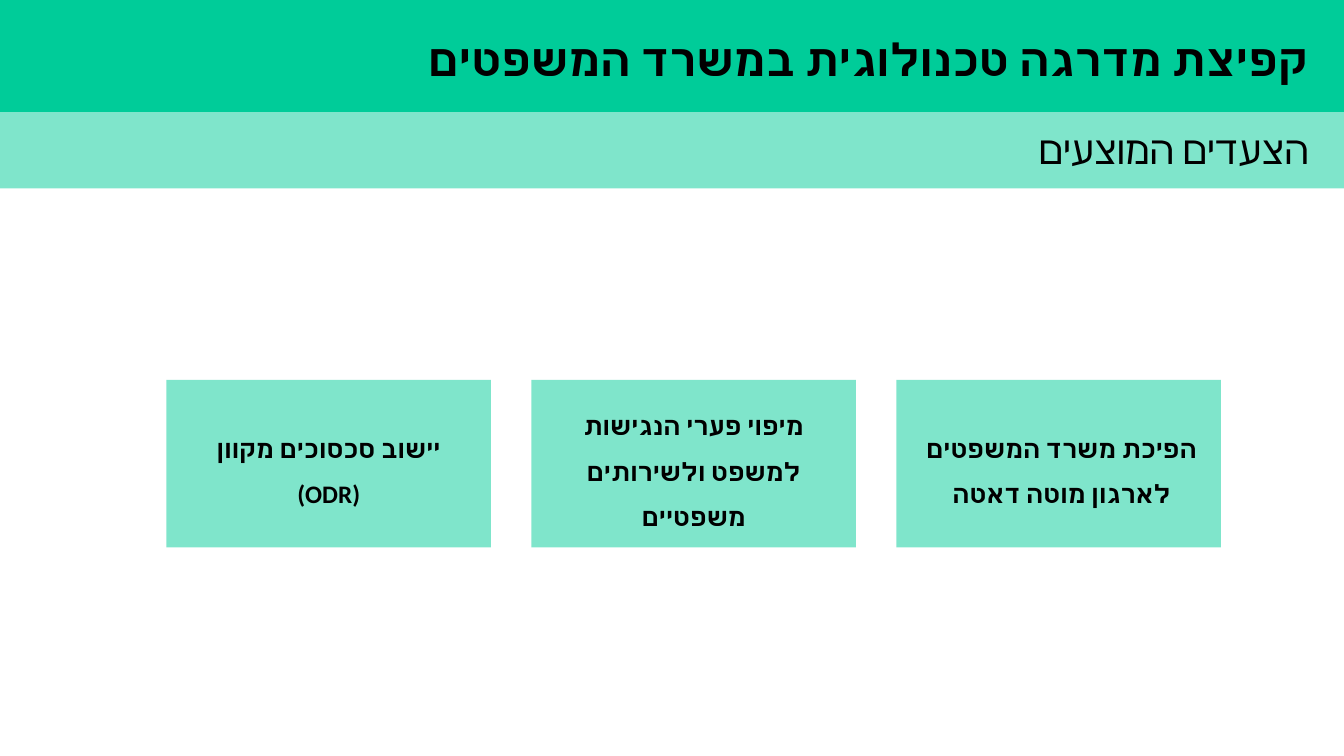
from lxml.etree import SubElement
from pptx import Presentation
from pptx.dml.color import RGBColor
from pptx.enum.shapes import MSO_SHAPE as Shape
from pptx.enum.text import MSO_ANCHOR as Anchor, MSO_AUTO_SIZE as AutoSize, PP_ALIGN as Align
from pptx.oxml.ns import qn
from pptx.util import Inches, Pt

COLORS = {"green": "00CC99", "text": "000000"}
FONT = "Calibri"
SLIDE_WIDTH, SLIDE_HEIGHT = 13.33, 7.5
STEP_LEFT, STEP_TOP, STEP_WIDTH, STEP_HEIGHT, STEP_GAP = 1.65, 3.77, 3.22, 1.66, 0.4
STEPS = [
    ["יישוב סכסוכים מקוון", "(ODR)"],
    ["מיפוי פערי הנגישות למשפט ולשירותים משפטיים"],
    ["הפיכת משרד המשפטים ", "לארגון מוטה דאטה "],
]


class HebrewSlide:
    def __init__(self, presentation):
        self.slide = presentation.slides.add_slide(presentation.slide_layouts[6])

    def add_lines(self, frame, lines, size, align, bold=False, spacing=None):
        frame.word_wrap = True
        for index, line in enumerate(lines):
            paragraph = frame.paragraphs[0] if index == 0 else frame.add_paragraph()
            paragraph.alignment = align
            paragraph.line_spacing = spacing
            paragraph._p.get_or_add_pPr().set("rtl", "1")
            run = paragraph.add_run()
            run.text = line
            font = run.font
            font.size = Pt(size)
            font.bold = bold
            font.color.rgb = RGBColor.from_string(COLORS["text"])
            font.name = FONT
            SubElement(run._r.get_or_add_rPr(), qn("a:cs"), typeface=FONT)

    def block(self, left, top, width, height, opacity=100):
        shape = self.slide.shapes.add_shape(
            Shape.RECTANGLE, Inches(left), Inches(top), Inches(width), Inches(height))
        shape.shadow.inherit = False
        shape.line.fill.background()
        shape.fill.solid()
        shape.fill.fore_color.rgb = RGBColor.from_string(COLORS["green"])
        if opacity < 100:
            color = shape._element.spPr.find(qn("a:solidFill"))[0]
            SubElement(color, qn("a:alpha"), val=str(opacity * 1000))
        return shape

    def step(self, left, lines):
        shape = self.block(left, STEP_TOP, STEP_WIDTH, STEP_HEIGHT, opacity=50)
        shape.text_frame.vertical_anchor = Anchor.MIDDLE
        self.add_lines(shape.text_frame, lines, 18, Align.CENTER, bold=True, spacing=1.5)

    def heading(self, top, height, text, size, bold=False):
        box = self.slide.shapes.add_textbox(
            Inches(1.41), Inches(top), Inches(11.67), Inches(height))
        box.text_frame.auto_size = AutoSize.SHAPE_TO_FIT_TEXT
        self.add_lines(box.text_frame, [text], size, Align.RIGHT, bold)


def main():
    presentation = Presentation()
    presentation.slide_width = Inches(SLIDE_WIDTH)
    presentation.slide_height = Inches(SLIDE_HEIGHT)
    page = HebrewSlide(presentation)
    page.block(0, 0, SLIDE_WIDTH, 1.11)
    page.block(0, 1.11, SLIDE_WIDTH, 0.76, opacity=50)
    for column, lines in enumerate(STEPS):
        page.step(STEP_LEFT + column * (STEP_WIDTH + STEP_GAP), lines)
    page.heading(0.27, 0.64, "קפיצת מדרגה טכנולוגית במשרד המשפטים", 32, bold=True)
    page.heading(1.19, 0.57, "הצעדים המוצעים", 28)
    presentation.save("out.pptx")


if __name__ == "__main__":
    main()
